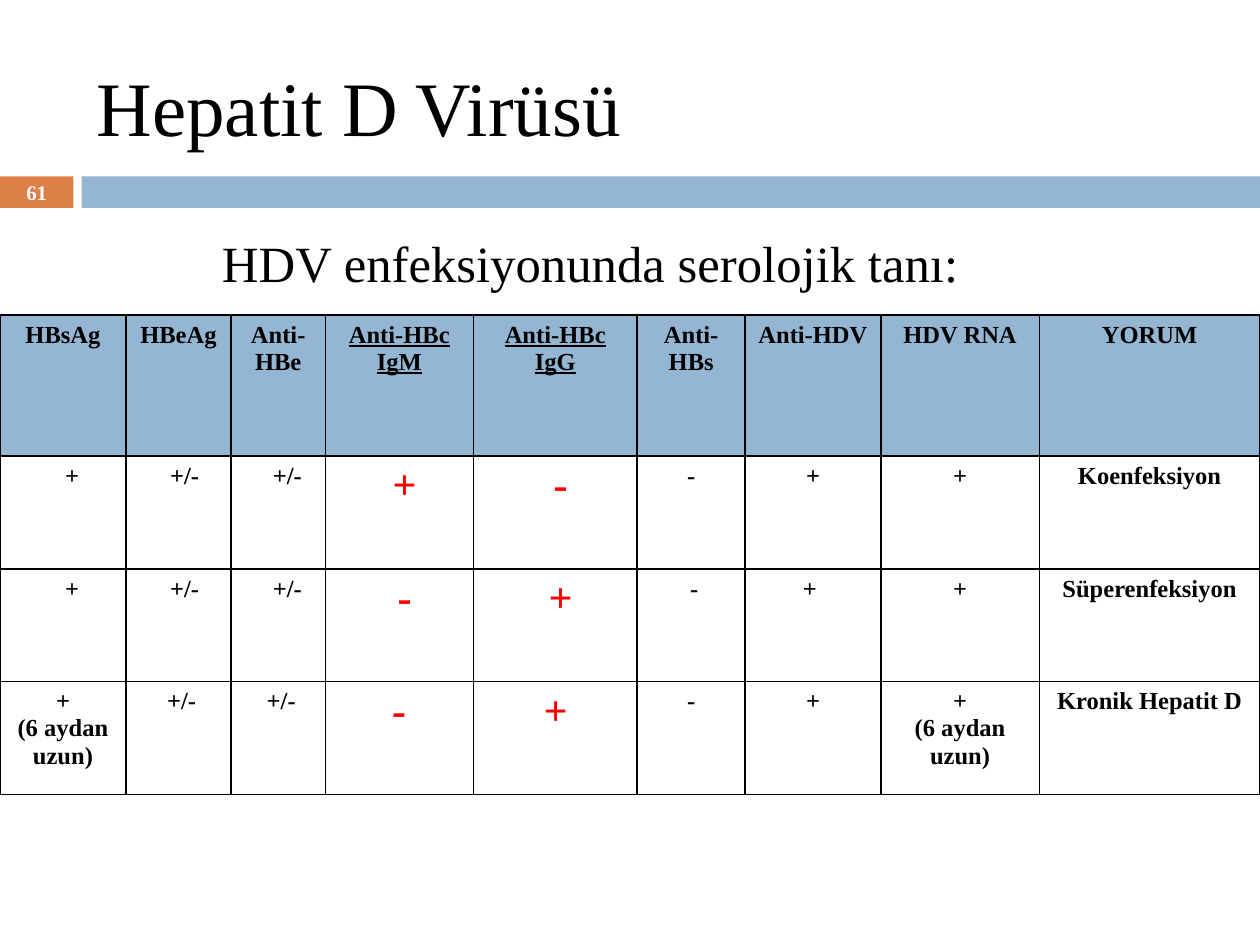
from dataclasses import dataclass

from lxml.etree import SubElement
from pptx import Presentation
from pptx.dml.color import RGBColor
from pptx.enum.shapes import MSO_SHAPE as Shape
from pptx.enum.text import MSO_ANCHOR as Anchor, PP_ALIGN as Align
from pptx.oxml.ns import qn
from pptx.util import Pt


@dataclass(frozen=True)
class Theme:
    font: str = "Times New Roman"
    ink: str = "000000"
    paper: str = "FFFFFF"
    blue: str = "94B6D2"
    orange: str = "DD8047"
    red: str = "FF0000"
    title: float = 44
    subtitle: float = 29
    sign: float = 24
    body: float = 14
    number: float = 11.9


THEME = Theme()
CELL_MARGIN = 7.2
SPACE = THEME.body / 4  # width of one space in the table's body size

COLUMNS = [72, 60, 54, 84.5, 93.7, 61.7, 77.5, 90.6, 126]
ROWS = [80.6, 64.5, 64.5, 64.5]
HEADERS = ["HBsAg", "HBeAg", "Anti-HBe", "Anti-HBc IgM", "Anti-HBc IgG",
           "Anti-HBs", "Anti-HDV", "HDV RNA", "YORUM"]
LONG_TERM = "+\n(6 aydan uzun)"
FINDINGS = [
    ["+", "+/-", "+/-", " +", " -", "-", "+", "+", "Koenfeksiyon"],
    ["+", "+/-", "+/-", " -", " +", " -", "+ ", "+", "Süperenfeksiyon"],
    [LONG_TERM, " +/-", " +/-", "-", "+", "-", "+", LONG_TERM, "Kronik Hepatit D"],
]
CORE_ANTIBODIES = (3, 4)  # the two Anti-HBc columns
INDENTS = {0: 3 * SPACE, 1: 2 * SPACE, 2: 3 * SPACE}  # first two findings


def write(frame, text, size, color=THEME.ink, align=Align.LEFT, **styles):
    frame.word_wrap = True
    for index, line in enumerate(text.split("\n")):
        paragraph = frame.paragraphs[0] if index == 0 else frame.add_paragraph()
        paragraph.alignment = align
        run = paragraph.add_run()
        run.text = line
        run.font.color.rgb = RGBColor.from_string(color)
        for name, value in {"name": THEME.font, "size": Pt(size), **styles}.items():
            setattr(run.font, name, value)


def add_bar(slide, box, color):
    bar = slide.shapes.add_shape(Shape.RECTANGLE, *map(Pt, box))
    bar.shadow.inherit = False
    bar.fill.solid()
    bar.fill.fore_color.rgb = RGBColor.from_string(color)
    bar.line.fill.background()
    return bar.text_frame


def add_text(slide, box, text, size, anchor, margin_left, margin_top):
    frame = slide.shapes.add_textbox(*map(Pt, box)).text_frame
    layout = {"vertical_anchor": anchor, "margin_left": Pt(margin_left),
              "margin_top": Pt(margin_top)}
    for name, value in layout.items():
        setattr(frame, name, value)
    write(frame, text, size)


def add_band(slide, left, top, width, height):
    """Numbered tab, a gap, then the bar that runs to the right edge."""
    tab, gap = 42, 4.6
    number = add_bar(slide, (left, top, tab, height), THEME.orange)
    number.vertical_anchor = Anchor.MIDDLE
    for side in ("left", "right", "top", "bottom"):
        setattr(number, f"margin_{side}", 0)
    write(number, "61", THEME.number, THEME.paper, Align.CENTER, bold=True)
    add_bar(slide, (left + tab + gap, top, width - tab - gap, height), THEME.blue)


def set_borders(cell):
    properties = cell._tc.get_or_add_tcPr()
    for index, side in enumerate(("lnL", "lnR", "lnT", "lnB")):
        line = SubElement(properties, qn(f"a:{side}"), w=str(Pt(1)))
        fill = SubElement(line, qn("a:solidFill"))
        SubElement(fill, qn("a:srgbClr"), val=THEME.ink)
        properties.insert(index, line)  # borders come before the fill


def add_serology_table(slide, left, top):
    box = (left, top, sum(COLUMNS), sum(ROWS))
    table = slide.shapes.add_table(len(ROWS), len(COLUMNS), *map(Pt, box)).table
    for column, width in zip(table.columns, COLUMNS):
        column.width = Pt(width)
    for row, height in zip(table.rows, ROWS):
        row.height = Pt(height)

    for r, values in enumerate([HEADERS, *FINDINGS]):
        for c, value in enumerate(values):
            cell = table.cell(r, c)
            core = c in CORE_ANTIBODIES
            header = r == 0
            indent = INDENTS.get(c, 0) if r in (1, 2) else 0
            cell.margin_left = Pt(CELL_MARGIN + indent)
            cell.fill.solid()
            cell.fill.fore_color.rgb = RGBColor.from_string(
                THEME.blue if header else THEME.paper)
            set_borders(cell)
            sign = core and not header
            write(cell.text_frame, value,
                  THEME.sign if sign else THEME.body,
                  THEME.red if sign else THEME.ink, Align.CENTER,
                  bold=True, underline=core and header, italic=sign and r == 3)


def main():
    deck = Presentation()
    deck.slide_width, deck.slide_height = Pt(720), Pt(540)
    slide = deck.slides.add_slide(deck.slide_layouts[6])

    # Title and band
    add_text(slide, (48.2, 18, 642, 78), "Hepatit D Virüsü",
             THEME.title, Anchor.MIDDLE, 7.2, 10.6)
    add_band(slide, 0, 100.8, 720, 18)

    # Subtitle and findings
    add_text(slide, (48.2, 126, 642, 50), "HDV enfeksiyonunda serolojik tanı:",
             THEME.subtitle, Anchor.TOP, 78.7, 6.5)
    add_serology_table(slide, 0, 180)

    deck.save("out.pptx")


if __name__ == "__main__":
    main()
